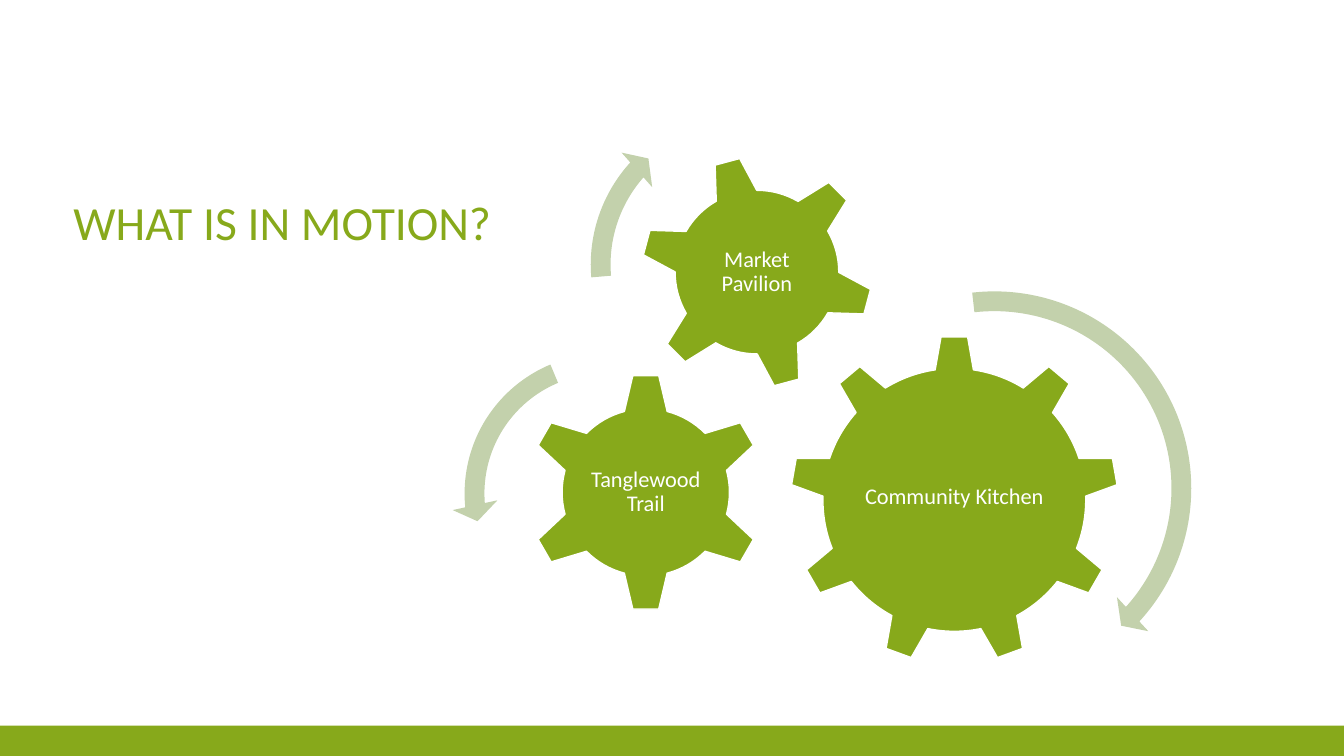
from pptx import Presentation
from pptx.dml.color import RGBColor
from pptx.enum.shapes import MSO_SHAPE as Shape
from pptx.enum.text import MSO_ANCHOR as Anchor, PP_ALIGN as Align
from pptx.util import Pt

COLORS = {"green": "87A91B", "sage": "C3D1AC", "white": "FFFFFF"}
FONT = "Calibri"
SLIDE_WIDTH, SLIDE_HEIGHT = 960, 540
BAR_HEIGHT = 21.6


def color(name):
    return RGBColor.from_string(COLORS[name])


def add_filled(slide, kind, left, top, width, height, fill, outline=None):
    shape = slide.shapes.add_shape(kind, Pt(left), Pt(top), Pt(width), Pt(height))
    shape.shadow.inherit = False
    shape.fill.solid()
    shape.fill.fore_color.rgb = color(fill)
    if outline:
        shape.line.color.rgb = color(outline)
        shape.line.width = Pt(1)
    else:
        shape.line.fill.background()
    return shape


def add_text(slide, text, box, size, ink, align, anchor, inset=None):
    """Add wrapped text; an inset in points replaces all four margins."""
    frame = slide.shapes.add_textbox(*map(Pt, box)).text_frame
    frame.word_wrap = True
    frame.vertical_anchor = anchor
    if inset is not None:
        frame.margin_left = frame.margin_right = Pt(inset)
        frame.margin_top = frame.margin_bottom = Pt(inset)
    paragraph = frame.paragraphs[0]
    paragraph.text = text
    paragraph.alignment = align
    paragraph.line_spacing = 0.9
    paragraph.font.name = FONT
    paragraph.font.size = Pt(size)
    paragraph.font.color.rgb = color(ink)


def add_gear(slide, kind, label, center, diameter, label_size, rotation=0, lift=0):
    """Add a gear with an upright label, raised from the center by lift."""
    x, y = center
    gear = add_filled(slide, kind, x - diameter / 2, y - diameter / 2,
                      diameter, diameter, "green", "white")
    gear.rotation = rotation
    width, height = label_size
    label_box = (x - width / 2, y - lift - height / 2, width, height)
    add_text(slide, label, label_box, 16, "white", Align.CENTER, Anchor.MIDDLE, 1.6)


def add_turn_arrow(slide, kind, left, top, diameter, adjustments):
    arrow = add_filled(slide, kind, left, top, diameter, diameter, "sage")
    for index, value in enumerate(adjustments):
        arrow.adjustments[index] = value


def main():
    deck = Presentation()
    deck.slide_width, deck.slide_height = Pt(SLIDE_WIDTH), Pt(SLIDE_HEIGHT)
    slide = deck.slides.add_slide(deck.slide_layouts[6])

    add_filled(slide, Shape.RECTANGLE, 0, SLIDE_HEIGHT - BAR_HEIGHT,
               SLIDE_WIDTH, BAR_HEIGHT, "green")
    add_text(slide, "WHAT IS IN MOTION?", (45.4, 92.9, 771.8, 90), 34,
             "green", Align.LEFT, Anchor.BOTTOM)

    add_gear(slide, Shape.GEAR_9, "Community Kitchen", (681.7, 357.1), 234.7,
             (140.4, 121), lift=2)
    add_gear(slide, Shape.GEAR_6, "Tanglewood Trail", (461.3, 351.7), 170.7,
             (85, 84.2))
    add_gear(slide, Shape.GEAR_6, "Market Pavilion", (540.7, 194.4), 167,
             (93.6, 93.6), rotation=345)

    add_turn_arrow(slide, Shape.CIRCULAR_ARROW, 560.2, 198.7, 300.2,
                   (0.047, 2.99, 25.393, 158.123, 0.055))
    add_turn_arrow(slide, Shape.LEFT_CIRCULAR_ARROW, 322.6, 243.4, 218.2,
                   (0.065, 4.3, 104.891, 148.378, 0.075))
    add_turn_arrow(slide, Shape.CIRCULAR_ARROW, 412.6, 71.3, 235.4,
                   (0.06, 3.941, 133.138, 105.082, 0.07))
    deck.save("out.pptx")


if __name__ == "__main__":
    main()
